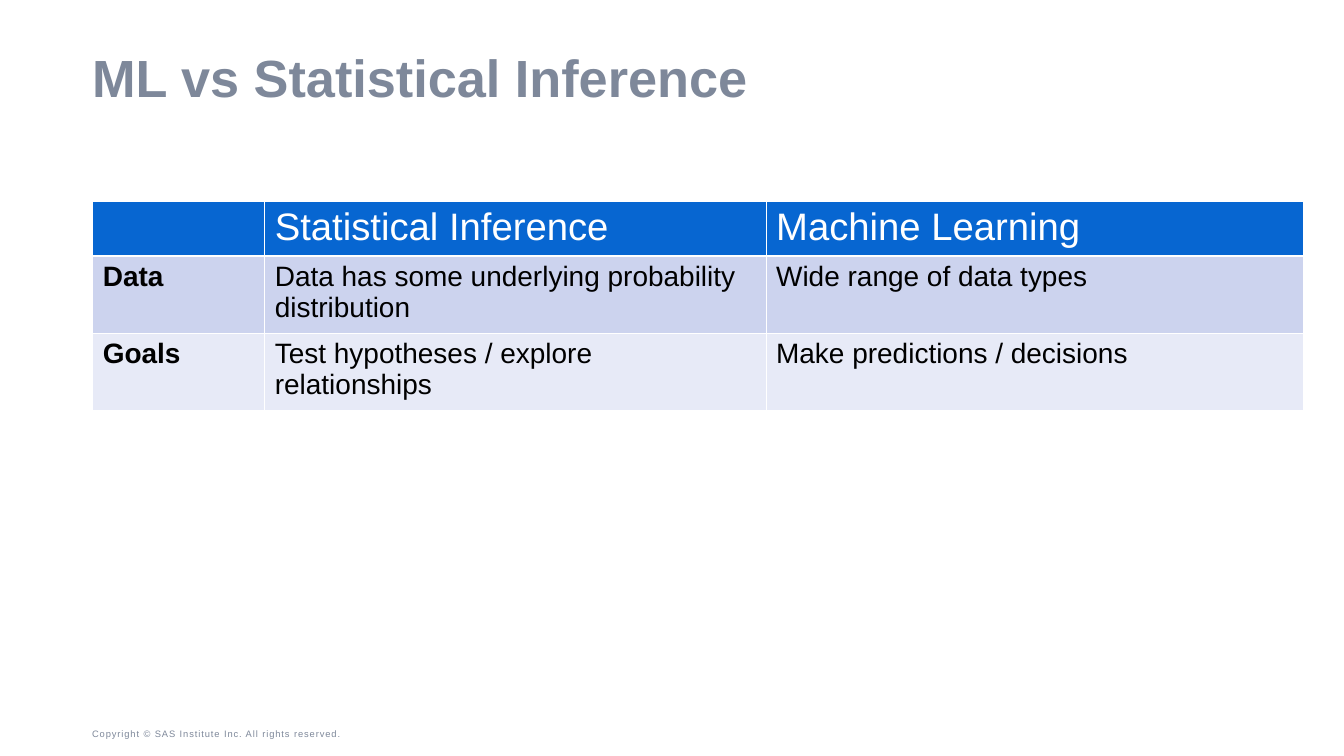
import pptx
import pptx.dml.color
import pptx.enum.text
import pptx.oxml.ns
import pptx.util
from lxml import etree

Inches, Pt = pptx.util.Inches, pptx.util.Pt
ANCHOR = pptx.enum.text.MSO_ANCHOR

GREY, WHITE, BLACK = "7E889A", "FFFFFF", "000000"
HEADING = "ML vs Statistical Inference"
COPYRIGHT = "Copyright © SAS Institute Inc. All rights reserved."
COMPARISON = [
    ("", "Statistical Inference", "Machine Learning"),
    ("Data", "Data has some underlying probability distribution", "Wide range of data types"),
    ("Goals", "Test hypotheses / explore relationships", "Make predictions / decisions"),
]
ROW_FILLS = ["0766D1", "CCD3EE", "E7EAF7"]
COLUMN_WIDTHS = [2.56, 7.46, 8]
ROW_HEIGHTS = [0.82, 1.15, 1.15]


def rgb(hex_code):
    return pptx.dml.color.RGBColor.from_string(hex_code)


def write(frame, text, size, color, bold=False, line_spacing=None, tracking=None):
    paragraph = frame.paragraphs[0]
    paragraph.line_spacing = line_spacing
    run = paragraph.add_run()
    run.text = text
    run.font.name = "Arial"
    run.font.size = Pt(size)
    run.font.bold = bold
    run.font.color.rgb = rgb(color)
    if tracking:
        run.font._element.set("spc", str(tracking * 100))


def set_margins(box, left, top, right, bottom):
    box.margin_left, box.margin_top = Inches(left), Inches(top)
    box.margin_right, box.margin_bottom = Inches(right), Inches(bottom)


def add_borders(cell, color, **widths):
    """Draw cell edges; must run before the cell's fill is set."""
    properties = cell._tc.get_or_add_tcPr()
    qn = pptx.oxml.ns.qn
    for side, width in widths.items():
        line = etree.SubElement(properties, qn(f"a:ln{side}"), w=str(Pt(width)))
        fill = etree.SubElement(line, qn("a:solidFill"))
        etree.SubElement(fill, qn("a:srgbClr"), val=color)


def add_comparison(slide):
    table = slide.shapes.add_table(
        len(COMPARISON), len(COLUMN_WIDTHS), Inches(1.38), Inches(2.99),
        Inches(sum(COLUMN_WIDTHS)), Inches(sum(ROW_HEIGHTS))).table
    for column, width in zip(table.columns, COLUMN_WIDTHS):
        column.width = Inches(width)
    for r, entries in enumerate(COMPARISON):
        table.rows[r].height = Inches(ROW_HEIGHTS[r])
        header = r == 0
        for c, entry in enumerate(entries):
            cell = table.cell(r, c)
            set_margins(cell, 0.15, 0.07, 0.15, 0.07)
            add_borders(cell, WHITE, L=1, R=1, T=1, B=3 if header else 1)
            cell.fill.solid()
            cell.fill.fore_color.rgb = rgb(ROW_FILLS[r])
            if entry:
                write(cell.text_frame, entry, size=41 if header else 30,
                      color=WHITE if header else BLACK, bold=not header and c == 0)


def main():
    deck = pptx.Presentation()
    deck.slide_width, deck.slide_height = Inches(20), Inches(11.25)
    slide = deck.slides.add_slide(deck.slide_layouts[5])

    copyright_line = slide.shapes.add_textbox(
        Inches(1.37), Inches(10.78), Inches(5.5), Inches(0.27)).text_frame
    copyright_line.word_wrap = True
    copyright_line.auto_size = pptx.enum.text.MSO_AUTO_SIZE.SHAPE_TO_FIT_TEXT
    copyright_line.vertical_anchor = ANCHOR.BOTTOM
    set_margins(copyright_line, 0, 0.05, 0.1, 0.05)
    write(copyright_line, COPYRIGHT, size=10, color=GREY, tracking=1)

    title = slide.shapes.title
    title.left, title.top = Inches(1.37), Inches(0.78)
    title.width, title.height = Inches(17.25), Inches(0.85)
    title.text_frame.vertical_anchor = ANCHOR.MIDDLE
    title.text_frame.auto_size = pptx.enum.text.MSO_AUTO_SIZE.NONE
    title.text_frame.paragraphs[0].alignment = pptx.enum.text.PP_ALIGN.LEFT
    set_margins(title.text_frame, 0, 0, 0, 0)
    write(title.text_frame, HEADING, size=56, color=GREY, bold=True, line_spacing=0.9)

    add_comparison(slide)
    deck.save("out.pptx")


if __name__ == "__main__":
    main()
